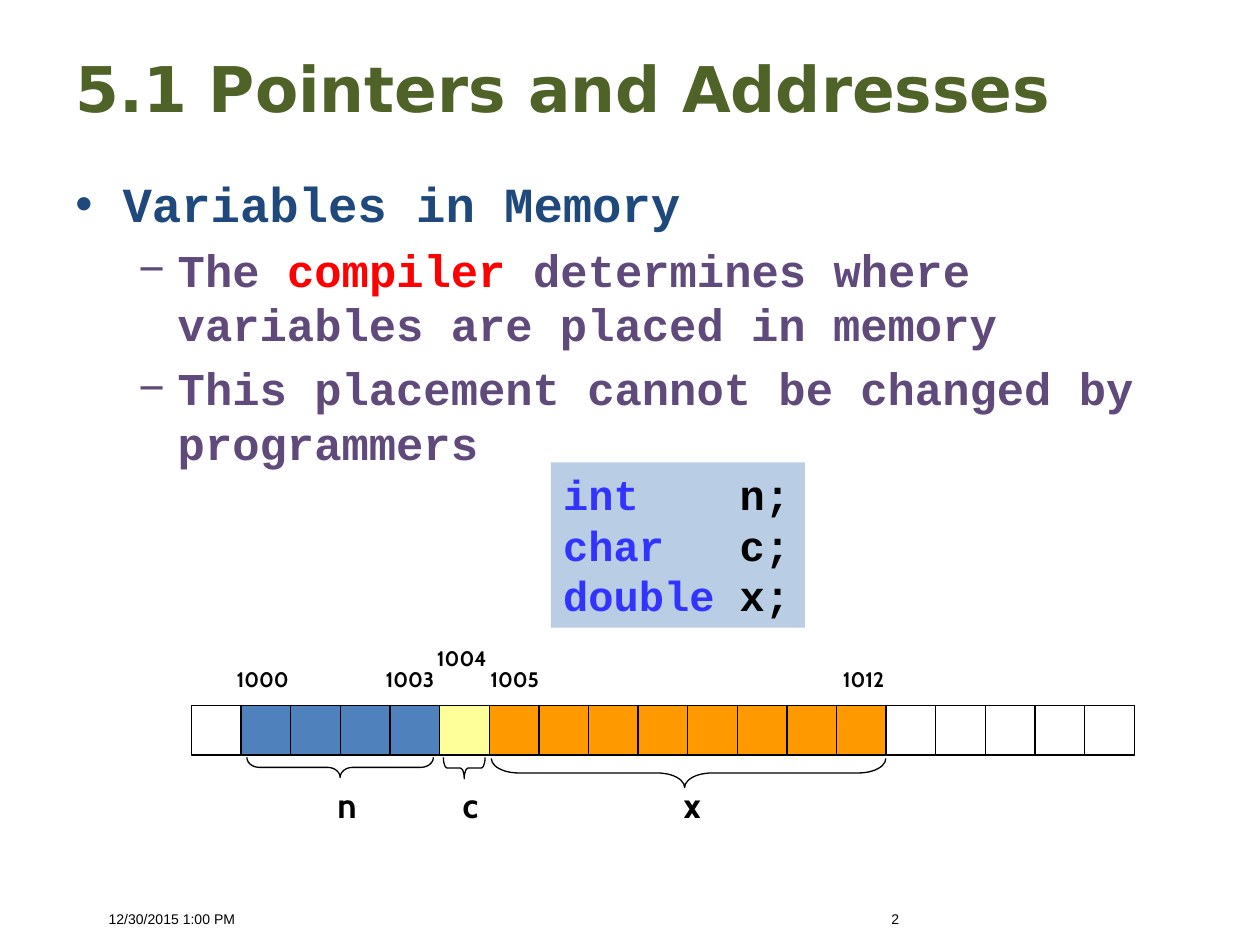
import pptx
import pptx.dml.color
import pptx.enum.shapes
import pptx.enum.text
import pptx.oxml.ns
import pptx.util
from lxml import etree

Pt = pptx.util.Pt
SHAPE = pptx.enum.shapes.MSO_SHAPE
ALIGN = pptx.enum.text.PP_ALIGN
ANCHOR = pptx.enum.text.MSO_ANCHOR


def color(value):
    return pptx.dml.color.RGBColor.from_string(value)


class Page:
    HEADING, CODE, LABEL, FOOTER = "DejaVu Sans", "Courier New", "Cabin", "Arial"
    BLACK, GREEN, NAVY, PURPLE = "000000", "4F6228", "1F497D", "604A7B"
    RED, KEYWORD, CODE_FILL = "FF0000", "3333FF", "B9CDE5"
    INT, CHAR, DOUBLE = "4F81BD", "FFFF99", "FF9900"

    def __init__(self, deck):
        self.slide = deck.slides.add_slide(deck.slide_layouts[5])

    def format_span(self, span, size, font, fill, bold=True):
        span.font.size = Pt(size)
        span.font.name = font
        span.font.bold = bold
        span.font.color.rgb = color(fill)

    def add_spans(self, para, spans, size, font):
        for text, fill in spans:
            span = para.add_run()
            span.text = text
            self.format_span(span, size, font, fill)

    def title(self, text, left, top, width, height):
        box = self.slide.shapes.title
        box.left, box.top, box.width, box.height = map(Pt, (left, top, width, height))
        frame = box.text_frame
        frame.text = text
        frame.vertical_anchor = ANCHOR.MIDDLE
        para = frame.paragraphs[0]
        para.alignment = ALIGN.LEFT
        self.format_span(para.runs[0], 36, self.HEADING, self.GREEN)

    def bullets(self, items, left, top, width, height):
        box = self.slide.shapes.add_textbox(Pt(left), Pt(top), Pt(width), Pt(height))
        frame = box.text_frame
        frame.word_wrap = True
        for index, (level, spans) in enumerate(items):
            para = frame.add_paragraph() if index else frame.paragraphs[0]
            margin, indent, mark, size = [(27, -27, "•", 28), (58.5, -22.5, "−", 26)][level]
            para.level = level
            properties = para._p.get_or_add_pPr()
            properties.set("marL", str(Pt(margin)))
            properties.set("indent", str(Pt(indent)))
            for tag, key, value in (("a:buFont", "typeface", "Arial"), ("a:buChar", "char", mark)):
                etree.SubElement(properties, pptx.oxml.ns.qn(tag)).set(key, value)
            if index:
                para.space_before = Pt(0.2 * size)
            self.add_spans(para, spans, size, self.CODE)

    def shape(self, kind, left, top, width, height, fill=None, line=None):
        shape = self.slide.shapes.add_shape(kind, Pt(left), Pt(top), Pt(width), Pt(height))
        shape.shadow.inherit = False
        if fill:
            shape.fill.solid()
            shape.fill.fore_color.rgb = color(fill)
        else:
            shape.fill.background()
        if line:
            shape.line.color.rgb = color(line)
            shape.line.width = Pt(0.75)
        else:
            shape.line.fill.background()
        return shape

    def code(self, lines, left, top, width, height):
        box = self.shape(SHAPE.RECTANGLE, left, top, width, height, self.CODE_FILL)
        frame = box.text_frame
        frame.word_wrap = False
        frame.vertical_anchor = ANCHOR.TOP
        para = frame.paragraphs[0]
        para.alignment = ALIGN.LEFT
        for index, (keyword, rest) in enumerate(lines):
            if index:
                para.add_line_break()
            self.add_spans(para, [(keyword, self.KEYWORD), (rest, self.BLACK)], 24, self.CODE)

    def label(self, text, left, top, width, height, size, font=LABEL, bold=True, anchor=ANCHOR.TOP):
        box = self.slide.shapes.add_textbox(Pt(left), Pt(top), Pt(width), Pt(height))
        frame = box.text_frame
        frame.word_wrap = True
        frame.text = text
        frame.vertical_anchor = anchor
        para = frame.paragraphs[0]
        para.alignment = ALIGN.CENTER
        self.format_span(para.runs[0], size, font, self.BLACK, bold)

    def brace(self, left, top, width, height, curve, point):
        # Sizes are those of the upright brace, which is then turned on its side
        shape = self.shape(SHAPE.LEFT_BRACE, left, top, width, height, line=self.BLACK)
        shape.rotation = 270
        shape.adjustments[0], shape.adjustments[1] = curve, point


def main():
    deck = pptx.Presentation()
    deck.slide_width, deck.slide_height = Pt(720), Pt(540)
    page = Page(deck)

    # Title and bullets
    page.title("5.1 Pointers and Addresses", 36, 20.9, 648, 57.6)
    page.bullets([
        (0, [("Variables in Memory", page.NAVY)]),
        (1, [("The ", page.PURPLE), ("compiler", page.RED),
             (" determines where variables are placed in memory", page.PURPLE)]),
        (1, [("This placement cannot be changed by programmers", page.PURPLE)]),
    ], 36, 95.8, 648, 185.8)

    # Footer
    for text, left in (("12/30/2015 1:00 PM", 14.4), ("2", 427.7)):
        page.label(text, left, 519.8, 167.8, 10.1, 8, page.FOOTER, False, ANCHOR.MIDDLE)

    # Declarations
    page.code([("int", "    n;"), ("char", "   c;"), ("double", " x;")], 314.8, 264.3, 145.2, 94.4)

    # Memory cells, one per byte
    cell = 28.35
    fills = [None] + [page.INT] * 4 + [page.CHAR] + [page.DOUBLE] * 8 + [None] * 5
    for index, fill in enumerate(fills):
        page.shape(SHAPE.RECTANGLE, 109.5 + index * cell, 403.2, cell, cell, fill, page.BLACK)

    # Addresses
    for text, left, top in (("1000", 126, 377.3), ("1003", 210.2, 377.3), ("1004", 239.8, 365.6),
                            ("1005", 270, 377.3), ("1012", 469.4, 377.3)):
        page.label(text, left, top, 48.2, 21.6, 12)

    # Braces and variable names
    page.brace(385.2, 329, 16.6, 225.4, 0.94, 0.49)
    page.brace(188.6, 385.2, 11.5, 106.6, 0.62, 0.5)
    page.brace(259.2, 427, 12.2, 23.8, 0.17, 0.5)
    for text, left in (("n", 174.2), ("c", 244.8), ("x", 371.5)):
        page.label(text, left, 444.2, 48.2, 31.7, 20)

    deck.save("out.pptx")


if __name__ == "__main__":
    main()
